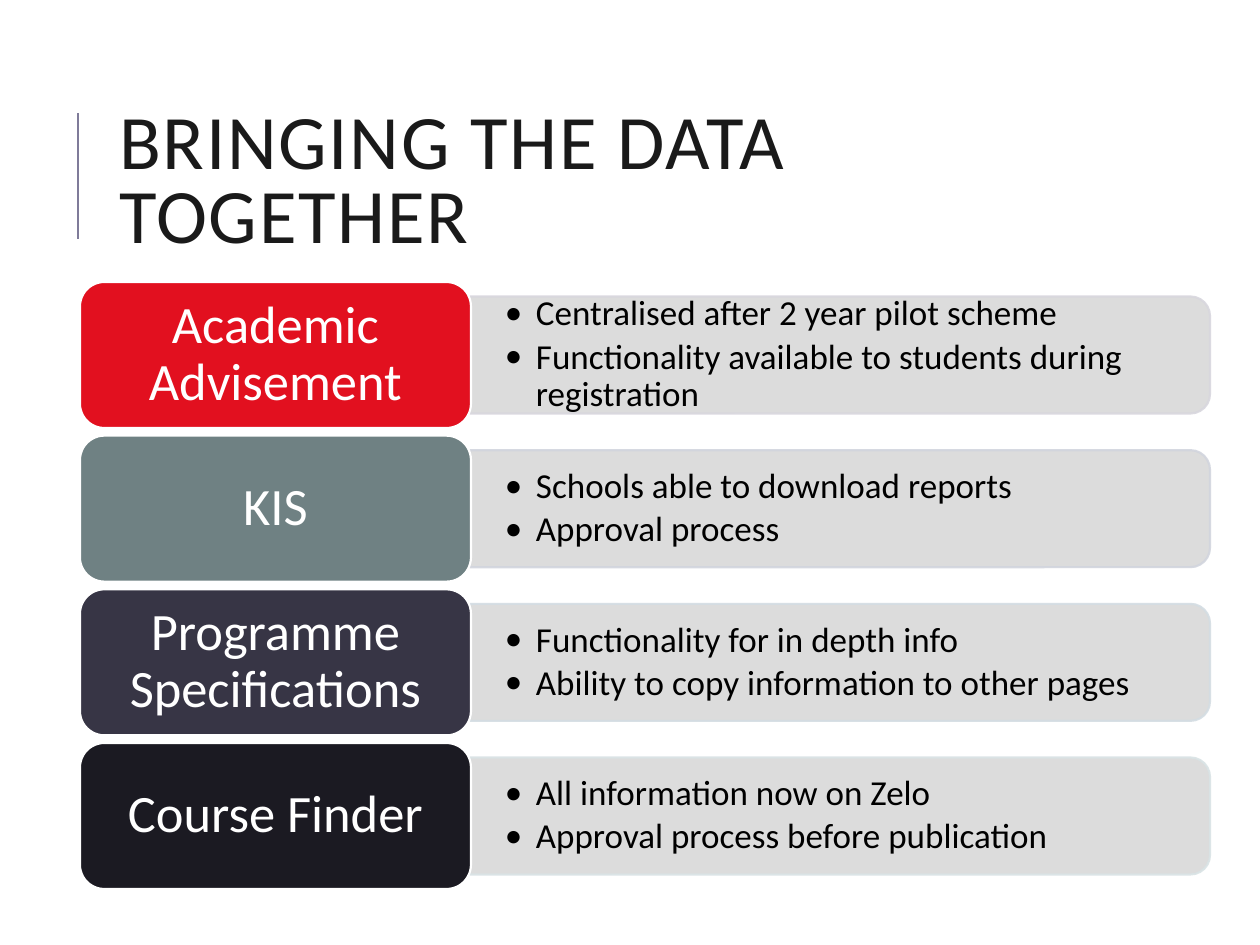
import dataclasses

import lxml.etree
import pptx
import pptx.dml.color
import pptx.enum.shapes
import pptx.enum.text
import pptx.oxml.ns
import pptx.util

RGB = pptx.dml.color.RGBColor
SHAPE = pptx.enum.shapes.MSO_SHAPE
ALIGN = pptx.enum.text.PP_ALIGN

WHITE = RGB(0xFF, 0xFF, 0xFF)
BLACK = RGB(0x00, 0x00, 0x00)
INK = RGB(0x1A, 0x1A, 0x1A)
RULE = RGB(0x7F, 0x7B, 0x99)
GREY = RGB(0xD9, 0xD9, 0xD9)
RED = RGB(0xE2, 0x10, 0x1F)
TEAL = RGB(0x6F, 0x81, 0x83)
PLUM = RGB(0x37, 0x35, 0x45)
NIGHT = RGB(0x1B, 0x1A, 0x22)

LEFT, TOP = 80, 282
CARD_W, CARD_H = 391, 146
PANEL_W, PANEL_H = 740, 117
PANEL_X = 470
TEXT_W, TEXT_H = 733, 106
SPAN = 461
EDGE = pptx.util.Pt(1.25)


@dataclasses.dataclass
class Row:
    name: str
    fill: RGB
    edge: RGB
    notes: tuple[str, ...]


ROWS = [
    Row("Academic Advisement", RED, RGB(0xD8, 0xD7, 0xDE),
        ("Centralised after 2 year pilot scheme",
         "Functionality available to students during registration")),
    Row("KIS", TEAL, RGB(0xD2, 0xD5, 0xDE),
        ("Schools able to download reports", "Approval process")),
    Row("Programme Specifications", PLUM, RGB(0xD4, 0xDD, 0xE3),
        ("Functionality for in depth info",
         "Ability to copy information to other pages")),
    Row("Course Finder", NIGHT, RGB(0xD9, 0xE3, 0xE5),
        ("All information now on Zelo",
         "Approval process before publication")),
]


def px(count: float) -> int:
    return round(count * 914400 / 126)


def box(*sizes: float) -> list[int]:
    return [px(size) for size in sizes]


def add_tag(parent, name: str, **attrs: str):
    return lxml.etree.SubElement(parent, pptx.oxml.ns.qn(name), attrs)


def write(shape, lines: tuple[str, ...], size: int, color: RGB, align: ALIGN,
          gap: float, pad: tuple[int, int]) -> list:
    frame = shape.text_frame
    frame.word_wrap = True
    frame.vertical_anchor = pptx.enum.text.MSO_ANCHOR.MIDDLE
    frame.margin_left = frame.margin_right = px(pad[0])
    frame.margin_top = frame.margin_bottom = px(pad[1])
    frame.text = "\n".join(lines)
    for para in frame.paragraphs:
        para.alignment = align
        para.line_spacing = gap
        para.font.name = "Calibri"
        para.font.size = pptx.util.Pt(size)
        para.font.color.rgb = color
    return list(frame.paragraphs)


def draw_shape(slide, kind: SHAPE, place: list[int], fill: RGB, edge: RGB):
    shape = slide.shapes.add_shape(kind, *place)
    shape.shadow.inherit = False
    shape.fill.solid()
    shape.fill.fore_color.rgb = fill
    shape.line.color.rgb = edge
    shape.line.width = EDGE
    return shape


def draw_title(slide) -> None:
    rule = slide.shapes.add_connector(
        pptx.enum.shapes.MSO_CONNECTOR.STRAIGHT, *box(78, 239, 78, 113))
    rule.line.color.rgb = RULE
    rule.line.width = pptx.util.Pt(1.5)
    add_tag(rule._element.spPr, "a:effectLst")
    title = slide.shapes.add_textbox(*box(106, 81, 1004, 207))
    para = write(title, ("BRINGING THE DATA TOGETHER",), 44, INK,
                 ALIGN.LEFT, 0.8, (13, 6))[0]
    para.runs[0].font._element.set("spc", "100")


def draw_panel(slide, row: Row, mid: float) -> None:
    place = box(PANEL_X + (PANEL_W - PANEL_H) / 2, mid - PANEL_W / 2,
                PANEL_H, PANEL_W)
    panel = draw_shape(slide, SHAPE.ROUND_2_SAME_RECTANGLE, place,
                       GREY, row.edge)
    panel.rotation = 90
    for color in panel._element.spPr.iter(pptx.oxml.ns.qn("a:srgbClr")):
        add_tag(color, "a:alpha", val="90000")


def draw_notes(slide, row: Row, mid: float) -> None:
    notes = slide.shapes.add_textbox(
        *box(PANEL_X + 1, mid - TEXT_H / 2, TEXT_W, TEXT_H))
    for para in write(notes, row.notes, 20, BLACK, ALIGN.LEFT, 0.9, (34, 17)):
        para.space_after = pptx.util.Pt(3)
        props = para._element.get_or_add_pPr()
        props.set("marL", str(px(31)))
        props.set("indent", str(px(-31)))
        face = lxml.etree.Element(pptx.oxml.ns.qn("a:buFont"),
                                  typeface="Calibri")
        bullet = lxml.etree.Element(pptx.oxml.ns.qn("a:buChar"), char="•")
        for mark in (face, bullet):
            props.find(pptx.oxml.ns.qn("a:defRPr")).addprevious(mark)


def draw_row(slide, row: Row, top: float) -> None:
    mid = top + CARD_H / 2
    draw_panel(slide, row, mid)
    draw_notes(slide, row, mid)
    card = draw_shape(slide, SHAPE.ROUNDED_RECTANGLE,
                      box(LEFT, top, CARD_W, CARD_H), row.fill, WHITE)
    write(card, (row.name,), 30, WHITE, ALIGN.CENTER, 0.9, (15, 8))


def main() -> None:
    deck = pptx.Presentation()
    deck.slide_width, deck.slide_height = box(1260, 945)
    slide = deck.slides.add_slide(deck.slide_layouts[6])
    draw_title(slide)
    for index, row in enumerate(ROWS):
        draw_row(slide, row, TOP + index * SPAN / 3)
    deck.save("out.pptx")


if __name__ == "__main__":
    main()
